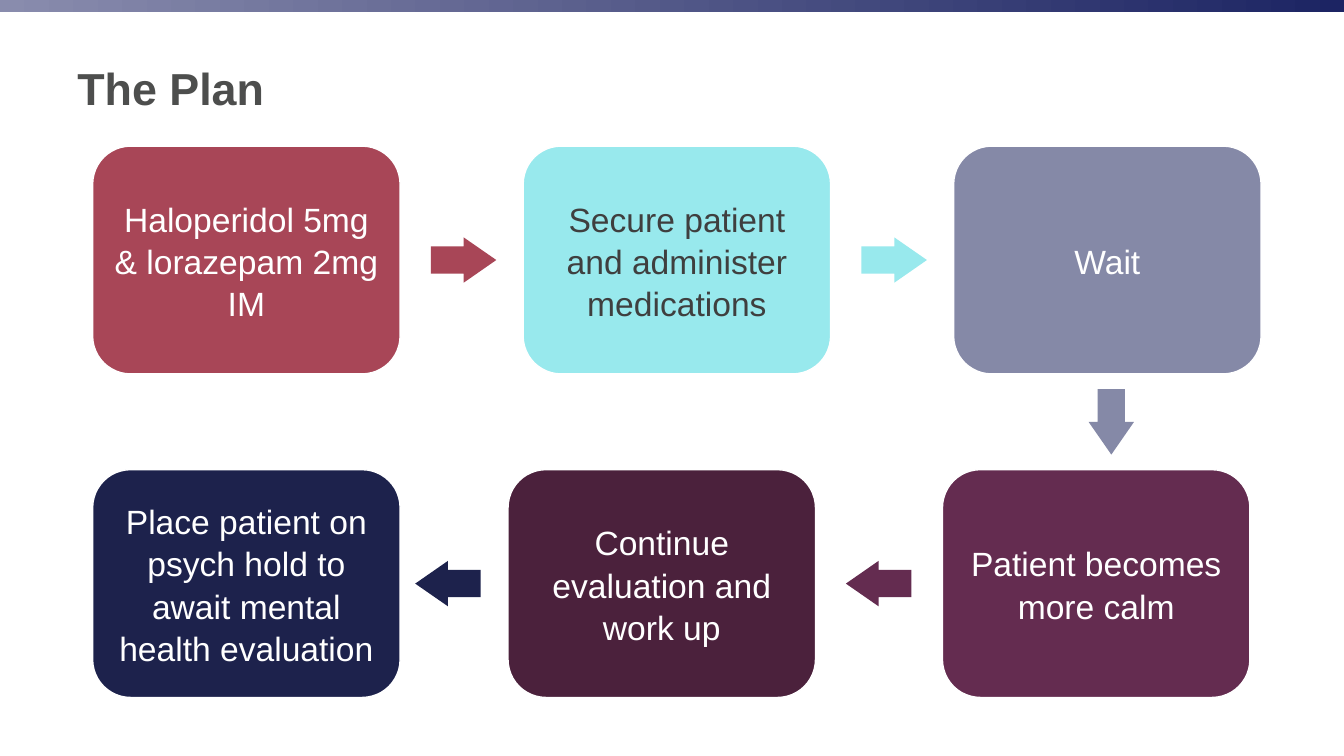
from pptx import Presentation
from pptx.dml.color import RGBColor
from pptx.enum.shapes import MSO_SHAPE
from pptx.enum.text import MSO_ANCHOR, PP_ALIGN
from pptx.util import Pt

COLOURS = {
    "white": "FFFFFF",
    "title": "4D4E4D",
    "dark_text": "3F3F3F",
    "bar_start": "898CAD",
    "bar_end": "1C2463",
    "red": "A84657",
    "aqua": "98E9ED",
    "lavender": "8589A7",
    "plum": "642C50",
    "wine": "4B213C",
    "navy": "1D224C",
}
BOX_WIDTH, BOX_HEIGHT = 219.6, 162.7
ARROW_LENGTH, ARROW_HEIGHT = 46.8, 32.4
TOP_ROW, BOTTOM_ROW = 104.4, 335.5
ARROW_DROP = (BOX_HEIGHT - ARROW_HEIGHT) / 2

STEPS = [
    ("Haloperidol 5mg & lorazepam 2mg IM", 66.2, TOP_ROW, "red", "white"),
    ("Secure patient and administer medications", 373.7, TOP_ROW, "aqua", "dark_text"),
    ("Wait", 681.2, TOP_ROW, "lavender", "white"),
    ("Patient becomes more calm", 673.2, BOTTOM_ROW, "plum", "white"),
    ("Continue evaluation and work up", 362.9, BOTTOM_ROW, "wine", "white"),
    ("Place patient on psych hold to await mental health evaluation",
     66.2, BOTTOM_ROW, "navy", "white"),
]
ARROWS = [
    (307.7, TOP_ROW + ARROW_DROP, "red", 0),
    (615.3, TOP_ROW + ARROW_DROP, "aqua", 0),
    (770.4, 285.1, "lavender", 90),
    (604.2, BOTTOM_ROW + ARROW_DROP, "plum", 180),
    (296.6, BOTTOM_ROW + ARROW_DROP, "navy", 180),
]


def colour(name):
    return RGBColor.from_string(COLOURS[name])


def style_text(para, size, colour_name, bold=False):
    for span in para.runs:
        span.font.name = "Arial"
        span.font.size = Pt(size)
        span.font.bold = bold
        span.font.color.rgb = colour(colour_name)


def add_bar(page, width):
    bar = page.shapes.add_shape(MSO_SHAPE.RECTANGLE, 0, 0, width, Pt(8.6))
    bar.shadow.inherit = False
    bar.line.fill.background()
    bar.fill.gradient()
    bar.fill.gradient_angle = 0
    for stop, name, position in zip(bar.fill.gradient_stops, ("bar_start", "bar_end"), (0, 1)):
        stop.color.rgb = colour(name)
        stop.position = position


def add_title(page, text):
    box = page.shapes.add_textbox(Pt(48.2), Pt(15.8), Pt(846), Pt(93.6))
    frame = box.text_frame
    frame.word_wrap = True
    frame.vertical_anchor = MSO_ANCHOR.MIDDLE
    frame.text = text
    style_text(frame.paragraphs[0], 32, "title", bold=True)


def add_step(page, text, left, top, fill, text_colour):
    box = page.shapes.add_shape(
        MSO_SHAPE.ROUNDED_RECTANGLE, Pt(left), Pt(top), Pt(BOX_WIDTH), Pt(BOX_HEIGHT))
    box.shadow.inherit = False
    box.fill.solid()
    box.fill.fore_color.rgb = colour(fill)
    box.line.color.rgb = colour("white")
    box.line.width = Pt(1)
    frame = box.text_frame
    frame.word_wrap = True
    frame.vertical_anchor = MSO_ANCHOR.MIDDLE
    frame.margin_left = frame.margin_right = Pt(6)
    frame.margin_top = frame.margin_bottom = Pt(6)
    frame.text = text
    para = frame.paragraphs[0]
    para.alignment = PP_ALIGN.CENTER
    para.line_spacing = 1.05
    style_text(para, 24, text_colour)


def add_arrow(page, left, top, fill, rotation):
    arrow = page.shapes.add_shape(
        MSO_SHAPE.RIGHT_ARROW, Pt(left), Pt(top), Pt(ARROW_LENGTH), Pt(ARROW_HEIGHT))
    arrow.adjustments[0] = 0.6
    arrow.adjustments[1] = 0.72
    arrow.rotation = rotation
    arrow.shadow.inherit = False
    arrow.fill.solid()
    arrow.fill.fore_color.rgb = colour(fill)
    arrow.line.fill.background()


def main():
    deck = Presentation()
    deck.slide_width, deck.slide_height = Pt(960), Pt(540)
    page = deck.slides.add_slide(deck.slide_layouts[6])
    add_bar(page, deck.slide_width)
    add_title(page, "The Plan")
    for step in STEPS:
        add_step(page, *step)
    for arrow in ARROWS:
        add_arrow(page, *arrow)
    deck.save("out.pptx")


if __name__ == "__main__":
    main()
